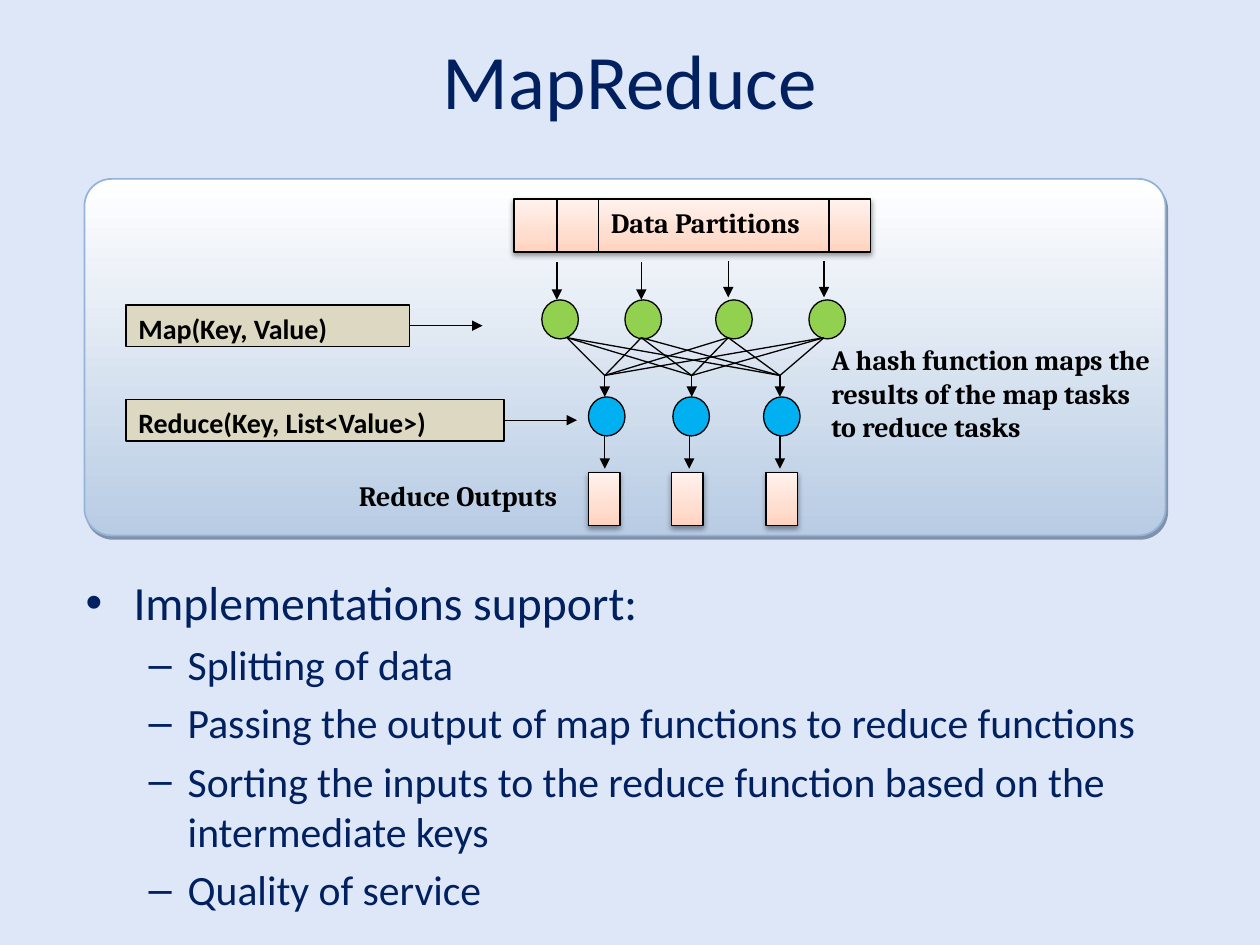
import pptx
import pptx.dml.color
import pptx.enum.shapes
import pptx.enum.text
import pptx.oxml
import pptx.oxml.ns
import pptx.util
from lxml import etree

Inches = pptx.util.Inches
Pt = pptx.util.Pt
RGBColor = pptx.dml.color.RGBColor
Shape = pptx.enum.shapes.MSO_SHAPE
Anchor = pptx.enum.text.MSO_ANCHOR
qn = pptx.oxml.ns.qn

BACKGROUND = RGBColor(0xDE, 0xE7, 0xF8)
NAVY = RGBColor(0x00, 0x20, 0x60)
BLACK = RGBColor(0x00, 0x00, 0x00)
GREEN = RGBColor(0x92, 0xD0, 0x50)
BLUE = RGBColor(0x00, 0xB0, 0xF0)
TAN = RGBColor(0xDD, 0xD8, 0xC2)
PANEL_LINE = RGBColor(0x95, 0xB3, 0xD7)
PANEL_SHADOW = RGBColor(0x24, 0x3F, 0x60)
PANEL_STOPS = [(0, RGBColor(0xFF, 0xFF, 0xFF)), (100, RGBColor(0xB8, 0xCC, 0xE4))]
PEACH_STOPS = [
    (0, RGBColor(0xFF, 0xD2, 0xBD)),
    (35, RGBColor(0xFF, 0xDE, 0xD0)),
    (100, RGBColor(0xFF, 0xF2, 0xED)),
]


class Diagram:
    body_font = "Calibri"
    label_font = "Cambria"
    label_size = 16
    line_width = 0.75

    def __init__(self, slide):
        self.slide = slide
        fill = slide.background.fill
        fill.solid()
        fill.fore_color.rgb = BACKGROUND

    def format_runs(self, paragraph, font, size, color, bold=False):
        for run in paragraph.runs:
            run.font.name = font
            run.font.size = Pt(size)
            run.font.color.rgb = color
            run.font.bold = bold

    def place(self, shape, left, top, width, height):
        shape.left, shape.top = Inches(left), Inches(top)
        shape.width, shape.height = Inches(width), Inches(height)

    def title(self, text, *box):
        title = self.slide.shapes.title
        self.place(title, *box)
        title.text_frame.text = text
        title.text_frame.vertical_anchor = Anchor.MIDDLE
        self.format_runs(title.text_frame.paragraphs[0], self.body_font, 44, NAVY)

    def bullets(self, items, *box):
        body = self.slide.placeholders[1]
        self.place(body, *box)
        frame = body.text_frame
        frame.auto_size = pptx.enum.text.MSO_AUTO_SIZE.NONE
        styles = [("•", 0.38, 0.38, 27.2), ("–", 0.81, 0.31, 23.8)]
        for index, (level, text) in enumerate(items):
            paragraph = frame.add_paragraph() if index else frame.paragraphs[0]
            paragraph.text = text
            paragraph.level = level
            bullet, margin, hanging, size = styles[level]
            properties = paragraph._p.get_or_add_pPr()
            properties.set("marL", str(Inches(margin)))
            properties.set("indent", str(-Inches(hanging)))
            etree.SubElement(properties, qn("a:buChar"), char=bullet)
            paragraph.space_before = Pt(size * 0.2 if index else 0)
            self.format_runs(paragraph, self.body_font, size, NAVY)

    def shape(self, kind, left, top, width, height, color=None, line=BLACK, weight=line_width):
        shape = self.slide.shapes.add_shape(
            kind, Inches(left), Inches(top), Inches(width), Inches(height))
        shape.shadow.inherit = False
        shape.line.color.rgb = line
        shape.line.width = Pt(weight)
        if color is not None:
            shape.fill.solid()
            shape.fill.fore_color.rgb = color
        return shape

    def gradient(self, shape, stops, angle):
        shape.fill.gradient()
        shape.fill.gradient_angle = angle
        stop_list = shape._element.spPr.find(".//" + qn("a:gsLst"))
        for stop in list(stop_list):
            stop_list.remove(stop)
        for position, color in stops:
            stop = etree.SubElement(stop_list, qn("a:gs"), pos=str(position * 1000))
            etree.SubElement(stop, qn("a:srgbClr"), val=str(color))

    def shadow(self, shape, color, alpha, blur, distance, angle):
        effects = shape._element.spPr.find(qn("a:effectLst"))
        outer = etree.SubElement(
            effects, qn("a:outerShdw"), blurRad=str(Pt(blur)), dist=str(Pt(distance)),
            dir=str(angle * 60000), algn="ctr", rotWithShape="0")
        tint = etree.SubElement(outer, qn("a:srgbClr"), val=str(color))
        etree.SubElement(tint, qn("a:alpha"), val=str(alpha * 1000))

    def panel(self, *box):
        panel = self.shape(Shape.ROUNDED_RECTANGLE, *box, line=PANEL_LINE, weight=1)
        panel.adjustments[0] = 0.076
        self.gradient(panel, PANEL_STOPS, 270)
        self.shadow(panel, PANEL_SHADOW, 50, 0, 2.2, 63)

    def data_block(self, *box):
        block = self.shape(Shape.RECTANGLE, *box)
        self.gradient(block, PEACH_STOPS, 90)
        self.shadow(block, BLACK, 38, 3.1, 1.6, 90)

    def task(self, left, top, color):
        self.shape(Shape.OVAL, left, top, 0.29, 0.31, color)

    def set_label(self, shape, text, font):
        frame = shape.text_frame
        frame.word_wrap = True
        frame.vertical_anchor = Anchor.TOP
        frame.text = text
        paragraph = frame.paragraphs[0]
        paragraph.alignment = pptx.enum.text.PP_ALIGN.LEFT
        self.format_runs(paragraph, font, self.label_size, BLACK, True)

    def label(self, text, left, top, width, height):
        box = self.slide.shapes.add_textbox(
            Inches(left), Inches(top), Inches(width), Inches(height))
        self.set_label(box, text, self.label_font)

    def line(self, x1, y1, x2, y2, arrow=False):
        connector = self.slide.shapes.add_connector(
            pptx.enum.shapes.MSO_CONNECTOR.STRAIGHT,
            Inches(x1), Inches(y1), Inches(x2), Inches(y2))
        connector.line.color.rgb = BLACK
        connector.line.width = Pt(self.line_width)
        if arrow:
            outline = connector._element.spPr.find(qn("a:ln"))
            etree.SubElement(outline, qn("a:tailEnd"), type="triangle")
        etree.SubElement(connector._element.spPr, qn("a:effectLst"))
        return connector

    def function_box(self, text, left, top, width):
        height = 0.33
        box = self.shape(Shape.RECTANGLE, left, top, width, height, TAN)
        self.set_label(box, text, self.body_font)
        right, middle = left + width, top + height / 2
        arrow = self.line(right, middle, right + 0.58, middle, arrow=True)
        arrow.begin_connect(box, 3)


def main():
    presentation = pptx.Presentation()
    presentation.slide_width = Inches(10)
    presentation.slide_height = Inches(7.5)
    diagram = Diagram(presentation.slides.add_slide(presentation.slide_layouts[1]))

    diagram.title("MapReduce", 0.5, 0, 9, 1.25)
    diagram.bullets([
        (0, "Implementations support:"),
        (1, "Splitting of data"),
        (1, "Passing the output of map functions to reduce functions"),
        (1, "Sorting the inputs to the reduce function based on the intermediate keys"),
        (1, "Quality of service"),
    ], 0.58, 4.5, 8.83, 2.67)

    diagram.panel(0.67, 1.42, 8.58, 2.83)
    for left in (4.3, 4.96, 5.68, 6.42):
        diagram.task(left, 2.38, GREEN)
    for left in (4.67, 5.34, 6.06):
        diagram.task(left, 3.15, BLUE)

    diagram.function_box("Map(Key, Value)", 1, 2.42, 2.25)
    diagram.function_box("Reduce(Key, List<Value>)", 1, 3.17, 3)

    for x, top, bottom in ((4.42, 2.08, 2.38), (5.09, 2.08, 2.38),
                           (5.78, 2.07, 2.36), (6.54, 2.07, 2.36)):
        diagram.line(x, top, x, bottom, arrow=True)
    for reduce_x, output_x, block_left in ((4.8, 4.8, 4.67), (5.49, 5.47, 5.33), (6.19, 6.19, 6.08)):
        for map_x in (4.5, 5.09, 5.78, 6.54):
            diagram.line(map_x, 2.68, reduce_x, 2.98)
        diagram.line(reduce_x, 2.98, reduce_x, 3.15, arrow=True)
        diagram.line(output_x, 3.46, output_x, 3.72, arrow=True)
        diagram.data_block(block_left, 3.75, 0.25, 0.42)

    diagram.data_block(4.08, 1.58, 2.83, 0.42)
    for x in (4.42, 4.75, 6.58):
        diagram.line(x, 1.58, x, 2)

    diagram.label("Data Partitions", 4.75, 1.58, 1.75, 0.42)
    diagram.label("Reduce Outputs", 2.75, 3.75, 1.83, 0.42)
    diagram.label("A hash function maps the results of the map tasks to reduce tasks",
                  6.5, 2.67, 2.75, 1.17)

    presentation.save("out.pptx")


if __name__ == "__main__":
    main()
